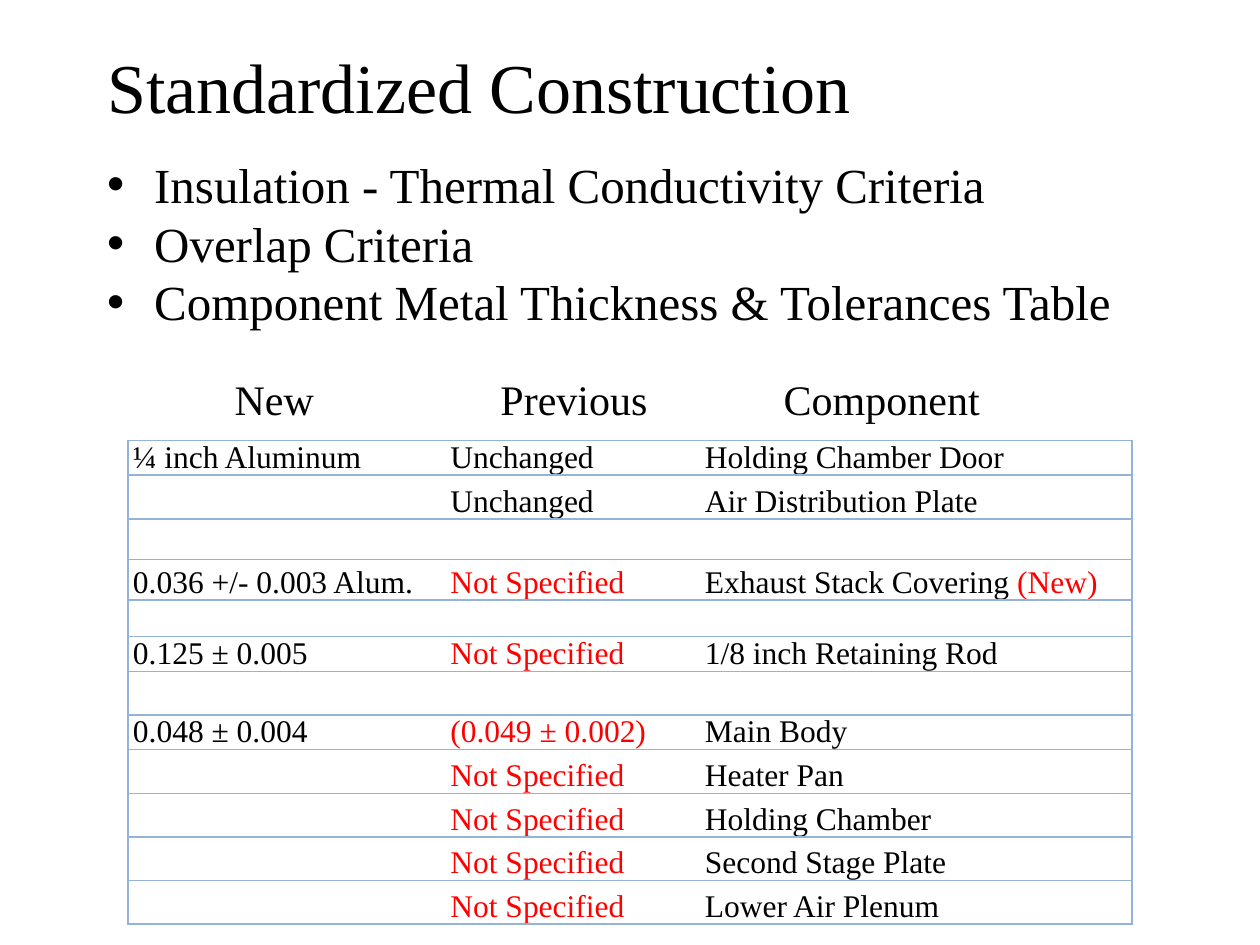
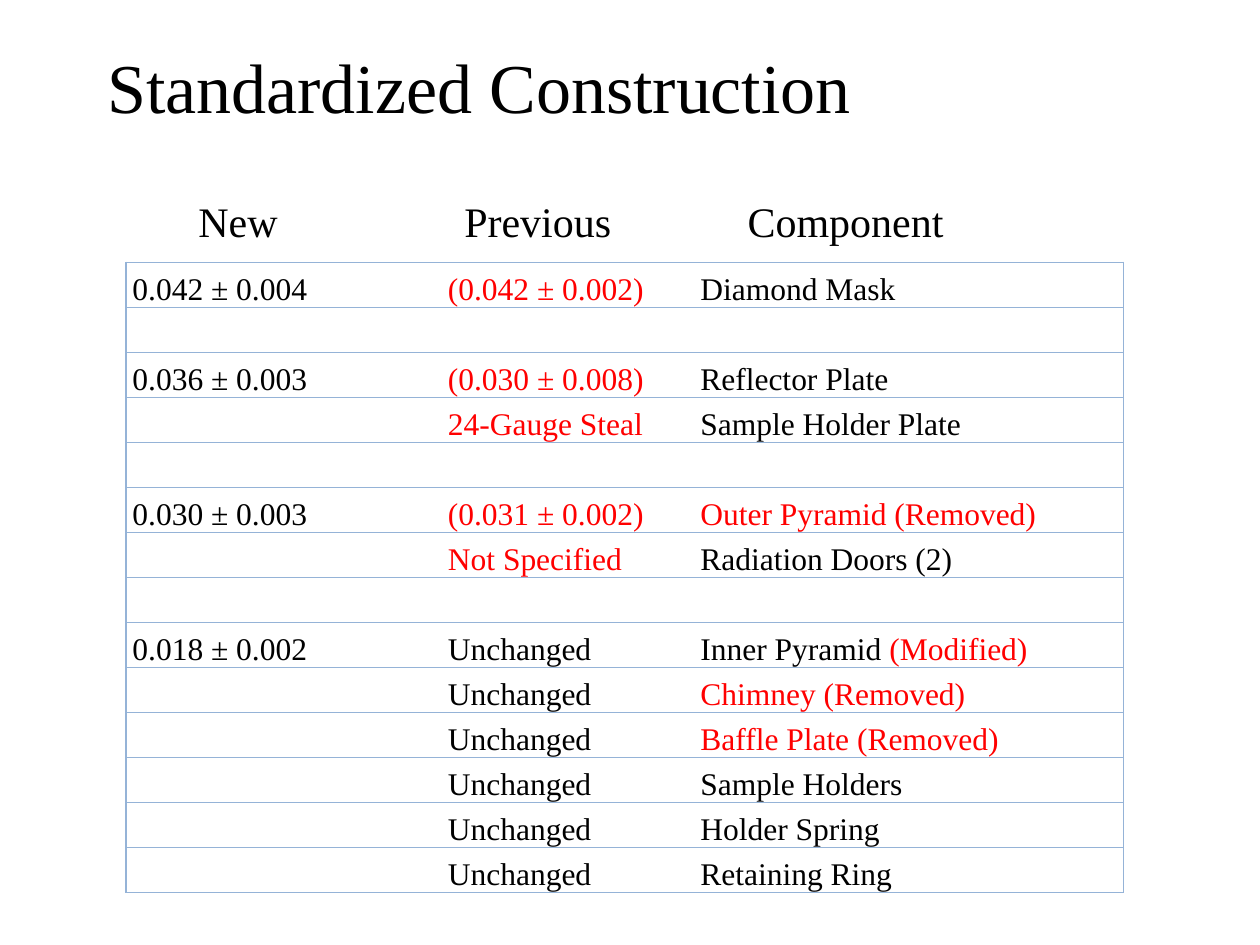
from lxml import etree
from pptx import Presentation
from pptx import util as u
from pptx.dml.color import RGBColor
from pptx.enum import text
from pptx.oxml import ns

SERIF = "Times New Roman"
BLACK, RED, RULE = "000000", "FF0000", "95B3D7"
HEADINGS = ["New", "Previous", "Component"]
HEADING_TABS = [5.36, 11.07]
TITLE_BOX = (1.91, 0.64, 21.59, 2.18)

# In a cell, text after "|" is red
THICKNESSES = [
    ("¼ inch Aluminum", "Unchanged", "Holding Chamber Door"),
    ("", "Unchanged", "Air Distribution Plate"),
    ("", "", ""),
    ("0.036 +/- 0.003 Alum.", "|Not Specified", "Exhaust Stack Covering |(New)"),
    ("", "", ""),
    ("0.125 ± 0.005", "|Not Specified", "1/8 inch Retaining Rod"),
    ("", "", ""),
    ("0.048 ± 0.004", "|(0.049 ± 0.002)", "Main Body"),
    ("", "|Not Specified", "Heater Pan"),
    ("", "|Not Specified", "Holding Chamber"),
    ("", "|Not Specified", "Second Stage Plate"),
    ("", "|Not Specified", "Lower Air Plenum"),
]
MORE_THICKNESSES = [
    ("0.042 ± 0.004", "|(0.042 ± 0.002)", "Diamond Mask"),
    ("", "", ""),
    ("0.036 ± 0.003", "|(0.030 ± 0.008)", "Reflector Plate"),
    ("", "|24-Gauge Steal", "Sample Holder Plate"),
    ("", "", ""),
    ("0.030 ± 0.003", "|(0.031 ± 0.002)", "|Outer Pyramid (Removed)"),
    ("", "|Not Specified", "Radiation Doors (2)"),
    ("", "", ""),
    ("0.018 ± 0.002", "Unchanged", "Inner Pyramid |(Modified)"),
    ("", "Unchanged", "|Chimney (Removed)"),
    ("", "Unchanged", "|Baffle Plate (Removed)"),
    ("", "Unchanged", "Sample Holders"),
    ("", "Unchanged", "Holder Spring"),
    ("", "Unchanged", "Retaining Ring"),
]


def color(hex_string):
    return RGBColor.from_string(hex_string)


def sub(parent, tag, **attributes):
    return etree.SubElement(parent, ns.qn(tag), attributes)


def set_font(part, size, hex_string=BLACK):
    part.font.name = SERIF
    part.font.size = u.Pt(size)
    part.font.color.rgb = color(hex_string)


def add_frame(slide, box, anchor):
    frame = slide.shapes.add_textbox(*map(u.Cm, box)).text_frame
    frame.word_wrap = True
    frame.vertical_anchor = anchor
    return frame


def add_tabs(properties, stops):
    tabs = sub(properties, "a:tabLst")
    for stop in stops:
        sub(tabs, "a:tab", pos=str(u.Cm(stop)), algn="l")


def add_title(slide):
    title = add_frame(slide, TITLE_BOX, text.MSO_ANCHOR.MIDDLE).paragraphs[0]
    title.text = "Standardized Construction"
    set_font(title, 40)


def add_criteria(slide, box, criteria):
    frame = add_frame(slide, box, text.MSO_ANCHOR.MIDDLE)
    for index, criterion in enumerate(criteria):
        line = frame.add_paragraph() if index else frame.paragraphs[0]
        line.text = criterion
        properties = line._p.get_or_add_pPr()
        properties.set("marL", str(u.Cm(0.95)))
        properties.set("indent", str(u.Cm(-0.95)))
        sub(properties, "a:buFont", typeface="Arial")
        sub(properties, "a:buChar", char="•")
        add_tabs(properties, [2.54])
        set_font(line, 28)


def add_headings(slide, left, top):
    frame = add_frame(slide, (left, top, 18.85, 1.27), text.MSO_ANCHOR.TOP)
    frame.margin_left = u.Cm(0.82)
    line = frame.paragraphs[0]
    line.text = "\t".join(HEADINGS)
    add_tabs(line._p.get_or_add_pPr(), HEADING_TABS)
    set_font(line, 24)


def style_cell(cell, ruled_sides, side_margin):
    cell.margin_left = cell.margin_right = u.Cm(side_margin)
    cell.margin_top, cell.margin_bottom = u.Cm(0.03), 0
    cell.vertical_anchor = text.MSO_ANCHOR.BOTTOM
    properties = cell._tc.get_or_add_tcPr()
    for side in "LRTB":
        border = sub(properties, f"a:ln{side}", w=str(u.Pt(1)))
        if side in ruled_sides:
            sub(sub(border, "a:solidFill"), "a:srgbClr", val=RULE)
        else:
            sub(border, "a:noFill")
    cell.fill.background()


def fill_cell(cell, entry):
    line = cell.text_frame.paragraphs[0]
    line.line_spacing = u.Pt(17.4)
    set_font(line, 18)
    for part, hex_string in zip(entry.split("|"), (BLACK, RED)):
        if part:
            run = line.add_run()
            run.text = part
            set_font(run, 18, hex_string)


def add_thickness_table(slide, left, top, widths, heights, rows, side_margin):
    box = map(u.Cm, (left, top, sum(widths), sum(heights)))
    table = slide.shapes.add_table(len(rows), len(widths), *box).table
    table.first_row = table.horz_banding = False
    for column, width in zip(table.columns, widths):
        column.width = u.Cm(width)
    for row, height, entries in zip(table.rows, heights, rows):
        row.height = u.Cm(height)
        for cell, entry, sides in zip(row.cells, entries, ("LTB", "TB", "RTB")):
            style_cell(cell, sides, side_margin)
            fill_cell(cell, entry)


def build_criteria_slide(slide):
    low, middle, high = 0.7, 0.82, 0.88
    heights = [low, high, middle, middle, low, low, high, low] + [high] * 4
    add_thickness_table(slide, 2.58, 8.88, (6.4, 5.13, 8.71), heights, THICKNESSES, 0.1)
    add_criteria(slide, (1.91, 2.97, 21.39, 3.84), [
        "Insulation - Thermal Conductivity Criteria",
        "Overlap Criteria",
        "Component Metal Thickness & Tolerances Table",
    ])
    add_title(slide)
    add_headings(slide, 3.91, 7.41)


def build_continued_slide(slide):
    count = len(MORE_THICKNESSES)
    add_thickness_table(slide, 2.54, 5.29, (6.36, 5.09, 8.66), [12.7 / count] * count,
                        MORE_THICKNESSES, 0.13)
    add_title(slide)
    add_headings(slide, 3.18, 3.81)


def main():
    deck = Presentation()
    deck.slide_width, deck.slide_height = u.Cm(25.4), u.Cm(19.05)
    for build in (build_criteria_slide, build_continued_slide):
        build(deck.slides.add_slide(deck.slide_layouts[6]))
    deck.save("out.pptx")


if __name__ == "__main__":
    main()
